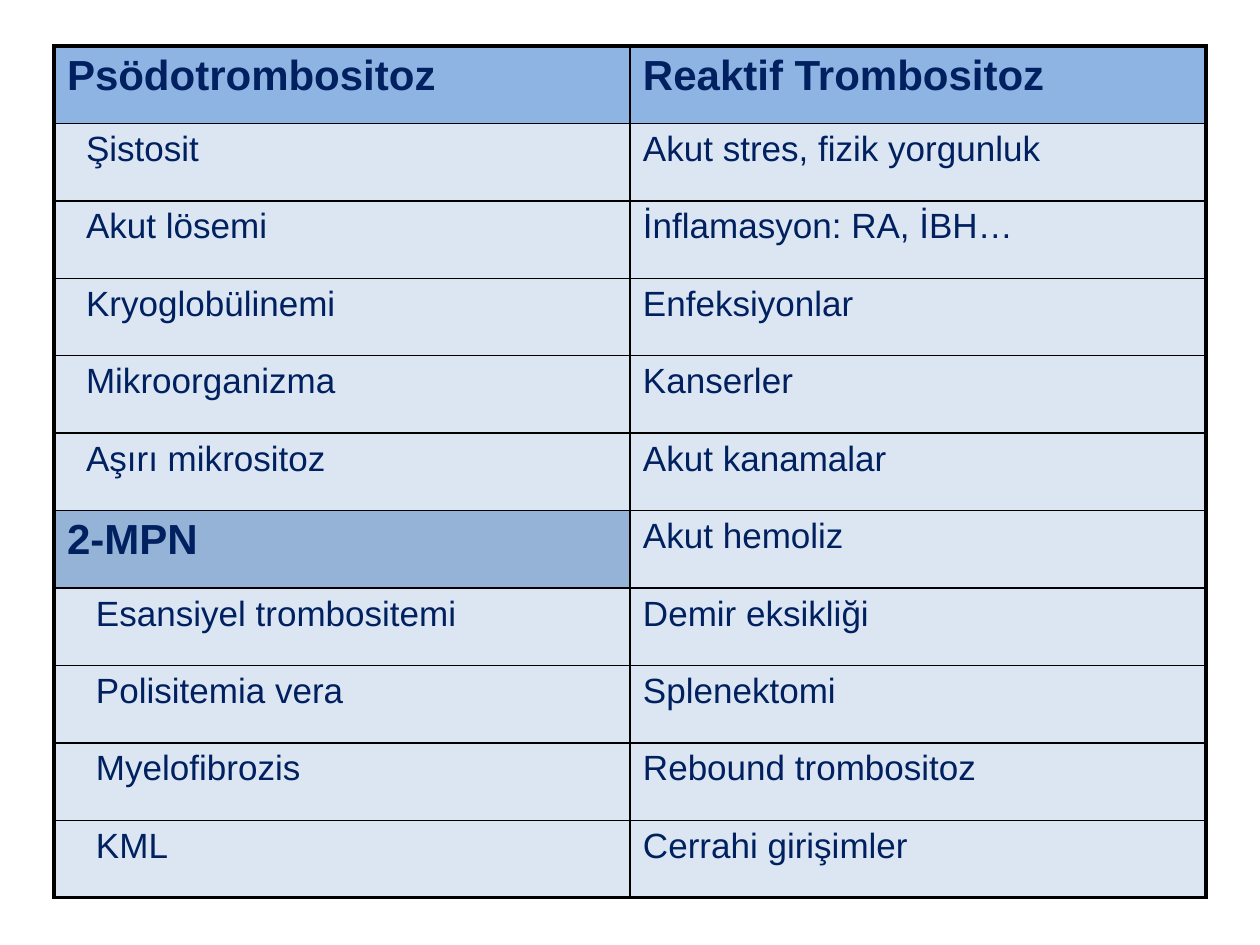
from dataclasses import dataclass

from lxml.etree import SubElement
from pptx import Presentation
from pptx.dml.color import RGBColor as Rgb
from pptx.oxml.ns import qn
from pptx.util import Emu, Pt

EMU_PER_PX = 914400 / 126


@dataclass(frozen=True)
class Theme:
    font: str = "Arial"
    text: str = "002060"
    border: str = "000000"
    header_fill: str = "8EB4E3"
    subheader_fill: str = "95B3D7"
    body_fill: str = "DCE6F2"
    heading_size: int = 24
    body_size: int = 20
    outer_line: float = 2.25
    inner_line: float = 1


THEME = Theme()
CELL_MARGIN = 13  # px
PSEUDO_INDENT, MPN_INDENT = 19, 29  # px

PSEUDO_HEADING = "Psödotrombositoz"
MPN_HEADING = "2-MPN"
REACTIVE_HEADING = "Reaktif Trombositoz"
PSEUDO_CAUSES = ["Şistosit", "Akut lösemi", "Kryoglobülinemi", "Mikroorganizma",
                 "Aşırı mikrositoz"]
MPN_CAUSES = ["Esansiyel trombositemi", "Polisitemia vera", "Myelofibrozis", "KML"]
REACTIVE_CAUSES = ["Akut stres, fizik yorgunluk", "İnflamasyon: RA, İBH…",
                   "Enfeksiyonlar", "Kanserler", "Akut kanamalar", "Akut hemoliz",
                   "Demir eksikliği", "Splenektomi", "Rebound trombositoz",
                   "Cerrahi girişimler"]


def px(length):
    return Emu(round(length * EMU_PER_PX))


def heading(text, fill=THEME.header_fill):
    return text, fill, THEME.heading_size, True, 0


def entries(texts, indent=0):
    return [(text, THEME.body_fill, THEME.body_size, False, indent) for text in texts]


def fill_cell(cell, text, fill, size, bold, indent):
    cell.margin_left = px(CELL_MARGIN + indent)
    cell.fill.solid()
    cell.fill.fore_color.rgb = Rgb.from_string(fill)
    paragraph = cell.text_frame.paragraphs[0]
    paragraph.text = text
    font = paragraph.runs[0].font
    font.name, font.size, font.bold = THEME.font, Pt(size), bold
    font.color.rgb = Rgb.from_string(THEME.text)


def set_borders(cell, outer_sides):
    properties = cell._tc.get_or_add_tcPr()
    # Border lines must come before the fill, in this order
    for position, side in enumerate("LRTB"):
        width = THEME.outer_line if side in outer_sides else THEME.inner_line
        line = SubElement(properties, qn(f"a:ln{side}"), w=str(Pt(width)))
        solid = SubElement(line, qn("a:solidFill"))
        SubElement(solid, qn("a:srgbClr"), val=THEME.border)
        properties.insert(position, line)


def add_grid(slide, columns, left, top, width, height):
    row_count, column_count = len(columns[0]), len(columns)
    frame = slide.shapes.add_table(row_count, column_count, px(left), px(top),
                                   px(width), px(height))
    table = frame.table
    table.first_row = table.horz_banding = False
    for row in table.rows:
        row.height = px(height / row_count)
    for column_index, contents in enumerate(columns):
        for row_index, content in enumerate(contents):
            cell = table.cell(row_index, column_index)
            fill_cell(cell, *content)
            edges = {"L": column_index == 0, "R": column_index == column_count - 1,
                     "T": row_index == 0, "B": row_index == row_count - 1}
            set_borders(cell, [side for side, outer in edges.items() if outer])


def main():
    presentation = Presentation()
    presentation.slide_width, presentation.slide_height = px(1260), px(945)
    slide = presentation.slides.add_slide(presentation.slide_layouts[6])

    # Left column: pseudothrombocytosis, then MPN; right column: reactive causes
    left_column = [heading(PSEUDO_HEADING), *entries(PSEUDO_CAUSES, PSEUDO_INDENT),
                   heading(MPN_HEADING, THEME.subheader_fill),
                   *entries(MPN_CAUSES, MPN_INDENT)]
    right_column = [heading(REACTIVE_HEADING), *entries(REACTIVE_CAUSES)]
    add_grid(slide, [left_column, right_column], 54, 46, 1152, 852)

    presentation.save("out.pptx")


if __name__ == "__main__":
    main()
